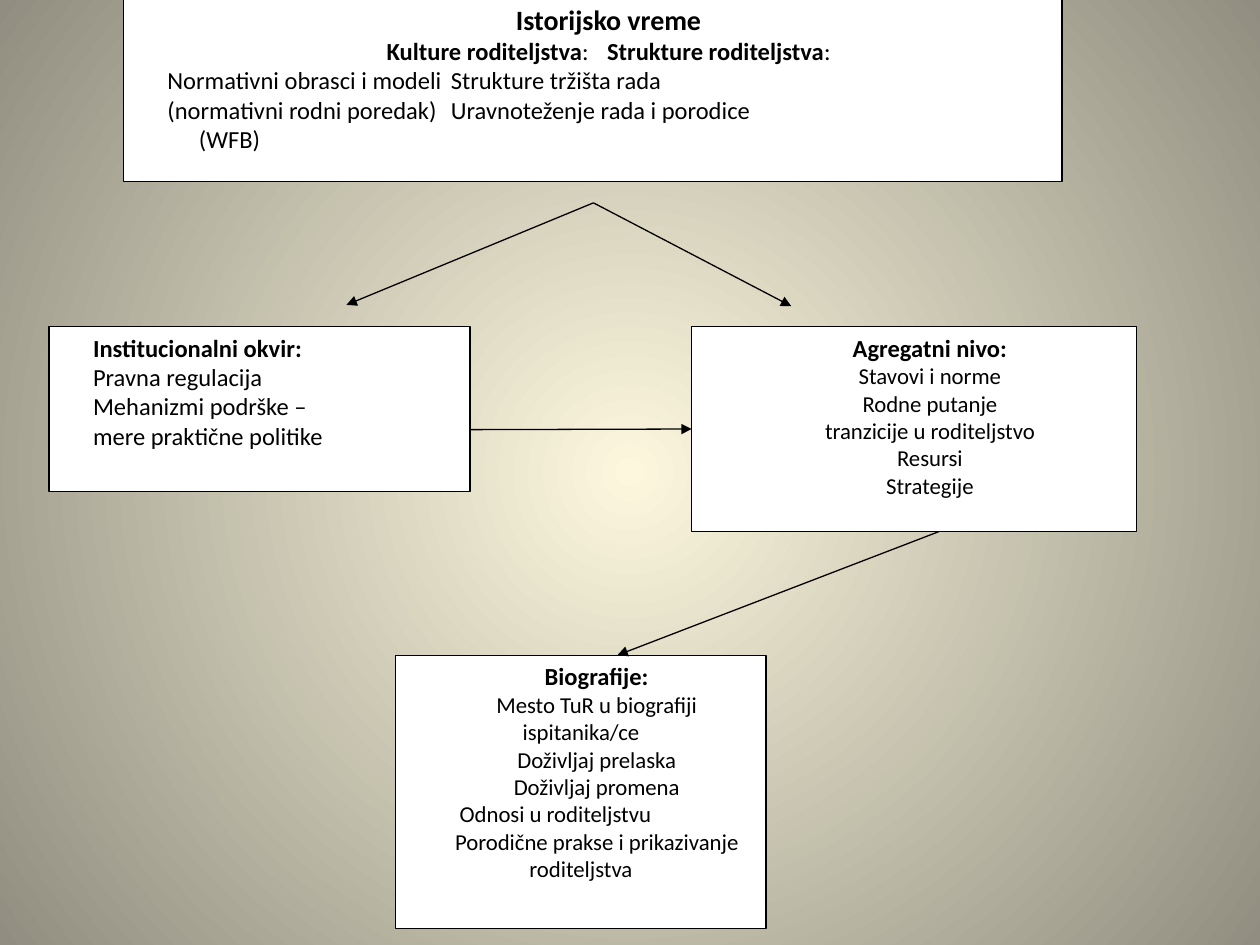
from dataclasses import dataclass
from typing import Optional

from lxml import etree
from pptx import Presentation
from pptx.dml.color import RGBColor
from pptx.enum.shapes import MSO_CONNECTOR, MSO_SHAPE
from pptx.enum.text import MSO_ANCHOR, PP_ALIGN
from pptx.oxml.ns import qn
from pptx.util import Inches, Pt

RECT, STRAIGHT = MSO_SHAPE.RECTANGLE, MSO_CONNECTOR.STRAIGHT
LEFT, MID, JUST = PP_ALIGN.LEFT, PP_ALIGN.CENTER, PP_ALIGN.JUSTIFY
TOP = MSO_ANCHOR.TOP
COLS, ROWS = 100, 75
CELL = Inches(0.1)
LEFT_SIDE = 1


@dataclass(frozen=True)
class Theme:
    font: str = "Calibri"
    ink: RGBColor = RGBColor(0, 0, 0)
    paper: RGBColor = RGBColor(255, 255, 255)
    glow: str = "FCF7DD"
    edge: str = "918E81"
    title: int = 16
    head: int = 14
    body: int = 13
    rule: float = 0.75


THEME = Theme()


@dataclass(frozen=True)
class Line:
    """A paragraph; bold and plain runs alternate, starting with bold."""
    runs: tuple[str, ...]
    size: int = THEME.body
    align: PP_ALIGN = MID
    indent: float = 2.5
    tab: Optional[float] = None


@dataclass(frozen=True)
class Box:
    col: float
    row: float
    wide: float
    high: float
    lines: list[Line]


@dataclass(frozen=True)
class Arrow:
    start: tuple[float, float]
    end: tuple[float, float]
    goal: Optional[str] = None


def head(text: str, size: int = THEME.head, align: PP_ALIGN = MID) -> Line:
    return Line((text,), size, align)


def body(text: str, **form) -> Line:
    return Line(("", text), **form)


def pair(left: str, right: str) -> Line:
    """Text at the left, and text centred on a tab stop at the right."""
    return body(f"{left}\t{right}", size=THEME.head, align=JUST, tab=54.1)


def rule(text: str, align: PP_ALIGN = JUST) -> Line:
    return body(text, size=THEME.head, align=align)


BOXES = {
    "time": Box(9.8, -0.3, 74.5, 14.7, [
        head("Istorijsko vreme", THEME.title),
        Line(("Kulture roditeljstva", ":\t", "Strukture roditeljstva", ":"), THEME.head),
        pair("Normativni obrasci i modeli", "Strukture tržišta rada"),
        pair("(normativni rodni poredak)", "Uravnoteženje rada i porodice"),
        pair("", "(WFB)"),
    ]),
    "frame": Box(3.9, 25.9, 33.4, 13.1, [
        head("Institucionalni okvir:", align=JUST),
        rule("Pravna regulacija"),
        rule("Mehanizmi podrške –"),
        rule("mere praktične politike", LEFT),
    ]),
    "level": Box(54.9, 25.9, 35.3, 16.3, [
        head("Agregatni nivo:"),
        *map(body, ("Stavovi i norme", "Rodne putanje", "tranzicije u roditeljstvo",
                    "Resursi", "Strategije")),
    ]),
    "lives": Box(31.4, 52, 29.4, 21.7, [
        head("Biografije:"),
        *map(body, ("Mesto TuR u biografiji ispitanika/ce", "Doživljaj prelaska",
                    "Doživljaj promena")),
        body("Odnosi u roditeljstvu", align=LEFT, indent=4.1),
        body("Porodične prakse i prikazivanje roditeljstva"),
    ]),
}

FORK = (47.1, 16.1)
ARROWS = [
    Arrow(FORK, (27.5, 24.2)),
    Arrow(FORK, (62.8, 24.3)),
    Arrow((37.3, 34.1), (54.9, 34.1), "level"),
    Arrow((74.5, 42.2), (49, 52)),
]


def span(count: float) -> int:
    return round(count * CELL)


def paint(slide) -> None:
    """Fill the background with a glow that spreads from the centre."""
    slide.background.fill.gradient()
    grad = slide.background._cSld.find(".//" + qn("a:gradFill"))
    for part in list(grad):
        grad.remove(part)
    stops = etree.SubElement(grad, qn("a:gsLst"))
    for pos, tone in (("0", THEME.glow), ("100000", THEME.edge)):
        stop = etree.SubElement(stops, qn("a:gs"), pos=pos)
        etree.SubElement(stop, qn("a:srgbClr"), val=tone)
    ring = etree.SubElement(grad, qn("a:path"), path="circle")
    etree.SubElement(ring, qn("a:fillToRect"), dict.fromkeys("ltrb", "50000"))


def write(para, line: Line) -> None:
    para.alignment = line.align
    props = para._p.get_or_add_pPr()
    props.set("marL", "0")
    props.set("indent", str(span(line.indent)))
    if line.tab:
        tabs = etree.SubElement(props, qn("a:tabLst"))
        etree.SubElement(tabs, qn("a:tab"), pos=str(span(line.tab)), algn="ctr")
    for rank, text in enumerate(line.runs):
        if not text:
            continue
        run = para.add_run()
        run.text = text
        form = {"name": THEME.font, "size": Pt(line.size), "bold": rank % 2 == 0}
        for key, value in form.items():
            setattr(run.font, key, value)
        run.font.color.rgb = THEME.ink


def draw_box(slide, box: Box):
    shape = slide.shapes.add_shape(
        RECT, *map(span, (box.col, box.row, box.wide, box.high)))
    shape.shadow.inherit = False
    shape.fill.solid()
    shape.fill.fore_color.rgb = THEME.paper
    shape.line.color.rgb = THEME.ink
    shape.line.width = Pt(THEME.rule)
    frame = shape.text_frame
    frame.word_wrap = True
    frame.vertical_anchor = TOP
    for rank, line in enumerate(box.lines):
        write(frame.add_paragraph() if rank else frame.paragraphs[0], line)
    return shape


def draw_arrow(slide, arrow: Arrow, shapes: dict) -> None:
    link = slide.shapes.add_connector(STRAIGHT, *map(span, arrow.start + arrow.end))
    if arrow.goal:
        link.end_connect(shapes[arrow.goal], LEFT_SIDE)
    link.line.color.rgb = THEME.ink
    link.line.width = Pt(THEME.rule)
    etree.SubElement(link.line._get_or_add_ln(), qn("a:tailEnd"), type="triangle")
    etree.SubElement(link._element.spPr, qn("a:effectLst"))


def main() -> None:
    deck = Presentation()
    deck.slide_width, deck.slide_height = span(COLS), span(ROWS)
    slide = deck.slides.add_slide(deck.slide_layouts[6])
    paint(slide)
    shapes = {name: draw_box(slide, box) for name, box in BOXES.items()}
    for arrow in ARROWS:
        draw_arrow(slide, arrow, shapes)
    deck.save("out.pptx")


if __name__ == "__main__":
    main()
